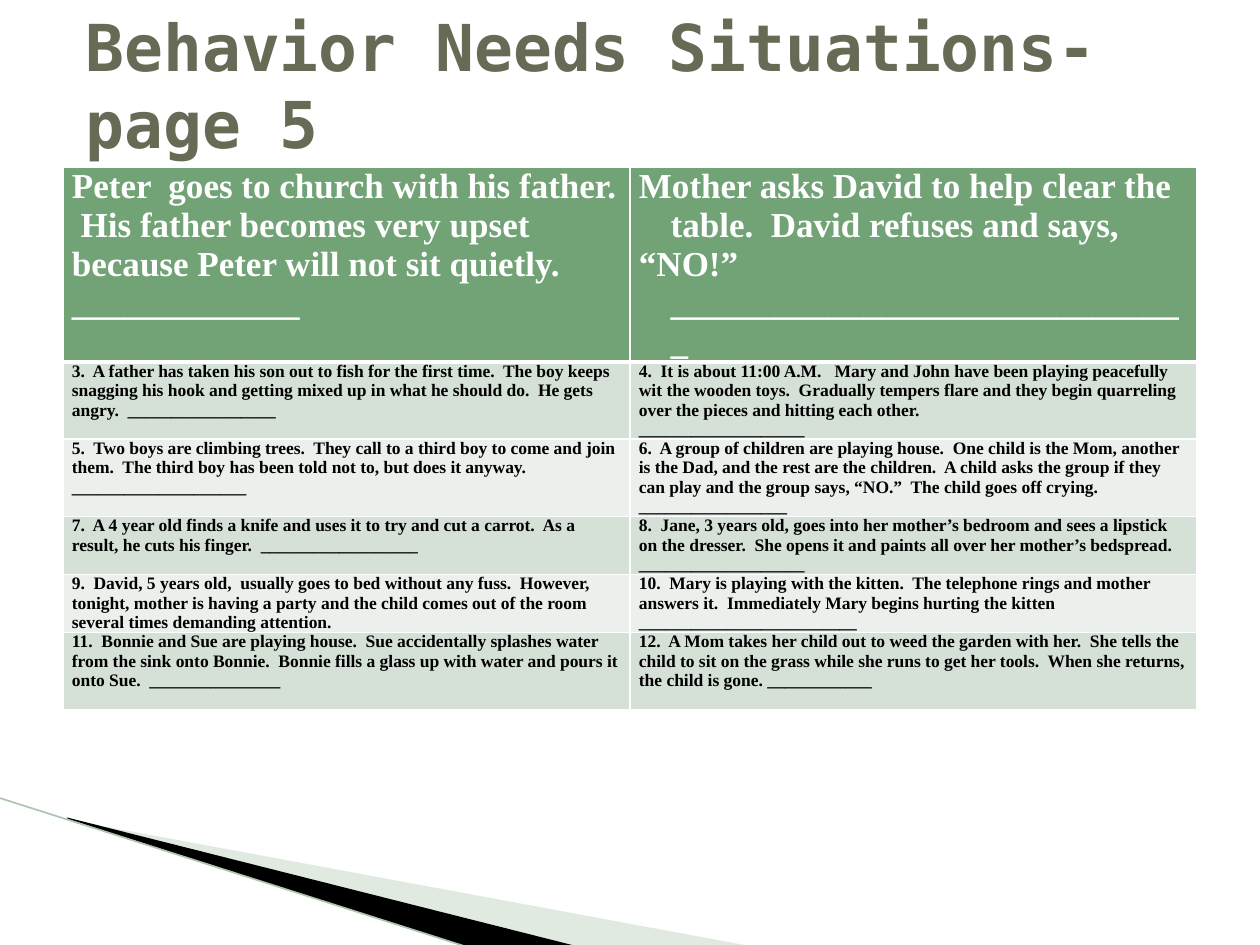
from lxml import etree
from pptx import Presentation
from pptx.dml.color import RGBColor
from pptx.enum.shapes import MSO_CONNECTOR
from pptx.enum.text import MSO_ANCHOR, MSO_AUTO_SIZE, PP_ALIGN
from pptx.oxml.ns import qn
from pptx.util import Cm, Pt

STRAIGHT = MSO_CONNECTOR.STRAIGHT
MIDDLE = MSO_ANCHOR.MIDDLE
NO_FIT = MSO_AUTO_SIZE.NONE
LEFT = PP_ALIGN.LEFT

COLORS = {
    "title": "676A55", "white": "FFFFFF", "black": "000000",
    "header": "72A376", "odd": "D5E0D6", "even": "EBF0EC",
    "wedge": "B3CBB5", "edge": "ACC6AE",
}
TITLE_FONT = "DejaVu Sans Mono"
BODY_FONT = "Times New Roman"
TITLE = "Behavior Needs Situations- page 5"
PALE_WEDGE = [(1.4, 16.53), (15.11, 19.07), (11.58, 19.07), (1.4, 16.51)]
BLACK_WEDGE = [(1.35, 16.48), (11.61, 19.07), (9.45, 19.1), (1.37, 16.51)]
SITUATIONS = [
    ("Peter  goes to church with his father.  His father becomes very upset because Peter will not sit quietly. _____________",
     "Mother asks David to help clear the table.  David refuses and says,\n“NO!”  ______________________________"),
    ("3.  A father has taken his son out to fish for the first time.  The boy keeps snagging his hook and getting mixed up in what he should do.  He gets angry.  _________________",
     "4.  It is about 11:00 A.M.   Mary and John have been playing peacefully wit the wooden toys.  Gradually tempers flare and they begin quarreling over the pieces and hitting each other.\n___________________"),
    ("5.  Two boys are climbing trees.  They call to a third boy to come and join them.  The third boy has been told not to, but does it anyway.   ____________________",
     "6.  A group of children are playing house.  One child is the Mom, another is the Dad, and the rest are the children.  A child asks the group if they can play and the group says, “NO.”  The child goes off crying.  _________________"),
    ("7.  A 4 year old finds a knife and uses it to try and cut a carrot.  As a result, he cuts his finger.  __________________",
     "8.  Jane, 3 years old, goes into her mother’s bedroom and sees a lipstick on the dresser.  She opens it and paints all over her mother’s bedspread.    ___________________"),
    ("9.  David, 5 years old,  usually goes to bed without any fuss.  However, tonight, mother is having a party and the child comes out of the room several times demanding attention.",
     "10.  Mary is playing with the kitten.  The telephone rings and mother answers it.  Immediately Mary begins hurting the kitten _________________________"),
    ("11.  Bonnie and Sue are playing house.  Sue accidentally splashes water from the sink onto Bonnie.  Bonnie fills a glass up with water and pours it onto Sue.  _______________",
     "12.  A Mom takes her child out to weed the garden with her.  She tells the child to sit on the grass while she runs to get her tools.  When she returns, the child is gone. ____________"),
]


def color(name):
    """Return the named colour."""
    return RGBColor.from_string(COLORS[name])


def style_font(font, name, size, color_name):
    """Apply a bold font style."""
    font.name, font.size, font.bold = name, Pt(size), True
    font.color.rgb = color(color_name)


def add_wedge(page, points, color_name, opacity=None):
    """Add a filled outline through points given in centimetres."""
    corners = [(Cm(x), Cm(y)) for x, y in points]
    builder = page.shapes.build_freeform(*corners[0])
    builder.add_line_segments(corners[1:], close=True)
    wedge = builder.convert_to_shape()
    wedge.shadow.inherit = False
    wedge.line.fill.background()
    wedge.fill.solid()
    wedge.fill.fore_color.rgb = color(color_name)
    if opacity is not None:
        tint = wedge._element.spPr.find(f".//{qn('a:srgbClr')}")
        etree.SubElement(tint, qn("a:alpha"), val=str(opacity * 1000))


def add_edge(page):
    """Add the thin line below the wedges."""
    edge = page.shapes.add_connector(STRAIGHT, Cm(-0.03), Cm(16.08), Cm(9.45), Cm(19.1))
    edge.line.color.rgb = color("edge")
    edge.line.width = Pt(0.95)
    etree.SubElement(edge._element.spPr, qn("a:effectLst"))


def set_borders(cell, bottom_width):
    """Draw white borders round a cell."""
    properties = cell._tc.get_or_add_tcPr()
    for side, width in (("L", 1), ("R", 1), ("T", 1), ("B", bottom_width)):
        border = etree.SubElement(properties, qn(f"a:ln{side}"), w=str(Pt(width)))
        fill = etree.SubElement(border, qn("a:solidFill"))
        etree.SubElement(fill, qn("a:srgbClr"), val=COLORS["white"])


def fill_cell(cell, text, row, column):
    """Write and format one situation."""
    is_header = row == 0
    set_borders(cell, 3 if is_header else 1)
    cell.fill.solid()
    cell.fill.fore_color.rgb = color("header" if is_header else "odd" if row % 2 else "even")
    cell.margin_left = cell.margin_right = Cm(0.18)
    cell.margin_top = cell.margin_bottom = 0
    cell.text_frame.text = text
    for para in cell.text_frame.paragraphs:
        if is_header and column == 1:
            properties = para._p.get_or_add_pPr()
            properties.set("marL", str(Cm(0.64)))
            properties.set("indent", str(Cm(-0.64)))
        for span in para.runs:
            style_font(span.font, BODY_FONT, 20 if is_header else 10,
                       "white" if is_header else "black")


def add_situations(page):
    """Add the two-column table of situations."""
    row_height = Cm(1.04)
    frame = page.shapes.add_table(len(SITUATIONS), 2, Cm(1.27), Cm(3.38),
                                  Cm(22.86), row_height * len(SITUATIONS))
    table = frame.table
    table.rows[len(SITUATIONS) - 1].height = Cm(1.56)
    for row, texts in enumerate(SITUATIONS):
        for column, text in enumerate(texts):
            fill_cell(table.cell(row, column), text, row, column)


def set_title(page):
    """Place and format the title."""
    title = page.shapes.title
    title.left, title.top, title.width, title.height = Cm(1.47), Cm(0.43), Cm(22.86), Cm(2.54)
    title.text_frame.text = TITLE
    title.text_frame.auto_size = NO_FIT
    title.text_frame.vertical_anchor = MIDDLE
    para = title.text_frame.paragraphs[0]
    para.alignment = LEFT
    style_font(para.runs[0].font, TITLE_FONT, 36.9, "title")


def main():
    """Build and save the slide."""
    deck = Presentation()
    deck.slide_width, deck.slide_height = Cm(25.4), Cm(19.05)
    page = deck.slides.add_slide(deck.slide_layouts[5])
    add_wedge(page, PALE_WEDGE, "wedge", 40)
    add_wedge(page, BLACK_WEDGE, "black")
    add_edge(page)
    add_situations(page)
    set_title(page)
    deck.save("out.pptx")


if __name__ == "__main__":
    main()
